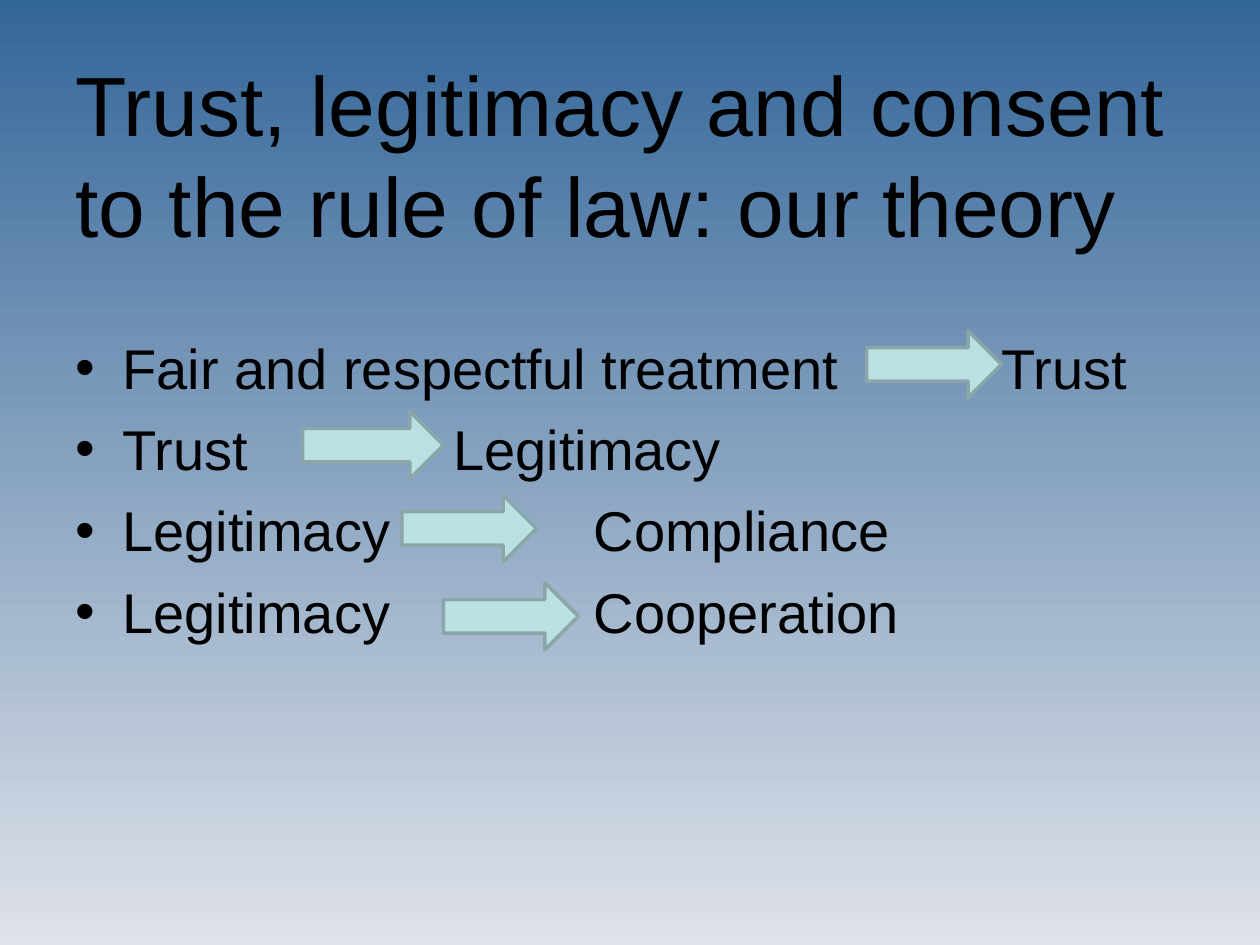
"""Build the slide on trust, legitimacy and consent."""
from dataclasses import dataclass

import lxml.etree
import pptx
import pptx.dml.color
import pptx.enum.shapes
import pptx.enum.text
import pptx.oxml.ns
import pptx.util

Cm = pptx.util.Cm
Pt = pptx.util.Pt
qn = pptx.oxml.ns.qn
FONT = "Arial"
INK = "000000"
INDENT = Cm(0.95)


@dataclass
class Claim:
    cause: str
    effect: str
    tab: float


@dataclass
class Arrow:
    left: float
    top: float
    width: float = 2.72
    height: float = 1.35


CLAIMS = [
    Claim("Fair and respectful treatment", "Trust", 18.67),
    Claim("Trust", "Legitimacy", 7.62),
    Claim("Legitimacy", "Compliance", 10.45),
    Claim("Legitimacy", "Cooperation", 10.45),
]
ARROWS = [
    Arrow(6.1, 8.3, 2.84),
    Arrow(17.47, 6.67),
    Arrow(8.1, 9.98),
    Arrow(8.94, 11.75),
]


def color(code: str) -> pptx.dml.color.RGBColor:
    return pptx.dml.color.RGBColor.from_string(code)


def paint(slide, top: str, base: str) -> None:
    fill = slide.background.fill
    fill.gradient()
    fill.gradient_angle = 270
    for stop, code, place in zip(fill.gradient_stops, (top, base), (0, 1)):
        stop.color.rgb = color(code)
        stop.position = place


def style(para, size: float) -> None:
    para.alignment = pptx.enum.text.PP_ALIGN.LEFT
    for run in para.runs:
        run.font.name = FONT
        run.font.size = Pt(size)
        run.font.color.rgb = color(INK)


def add_title(slide, text: str) -> None:
    title = slide.shapes.title
    title.left, title.top = Cm(1.27), Cm(2.26)
    title.width, title.height = Cm(22.86), Cm(1.68)
    frame = title.text_frame
    frame.text = text
    frame.word_wrap = True
    frame.auto_size = pptx.enum.text.MSO_AUTO_SIZE.NONE
    frame.vertical_anchor = pptx.enum.text.MSO_ANCHOR.MIDDLE
    style(frame.paragraphs[0], 48)


def add_bullet(para, tab: float) -> None:
    props = para._p.get_or_add_pPr()
    props.set("marL", str(INDENT))
    props.set("indent", str(-INDENT))
    lxml.etree.SubElement(props, qn("a:buFont"), typeface=FONT)
    lxml.etree.SubElement(props, qn("a:buChar"), char="•")
    tabs = lxml.etree.SubElement(props, qn("a:tabLst"))
    lxml.etree.SubElement(tabs, qn("a:tab"), pos=str(Cm(tab)), algn="l")


def add_claims(slide, claims: list[Claim]) -> None:
    box = slide.shapes.add_textbox(Cm(1.27), Cm(6.6), Cm(22.86), Cm(10.49))
    frame = box.text_frame
    frame.word_wrap = True
    frame.text = "\n".join(f"{claim.cause}\t{claim.effect}" for claim in claims)
    for row, (para, claim) in enumerate(zip(frame.paragraphs, claims)):
        add_bullet(para, claim.tab)
        para.space_before = Pt(8 if row else 0)
        style(para, 32)


def add_arrow(slide, arrow: Arrow) -> None:
    shape = slide.shapes.add_shape(
        pptx.enum.shapes.MSO_SHAPE.RIGHT_ARROW,
        Cm(arrow.left), Cm(arrow.top), Cm(arrow.width), Cm(arrow.height))
    shape.shadow.inherit = False
    shape.fill.solid()
    shape.fill.fore_color.rgb = color("BBE0E3")
    shape.line.color.rgb = color("8AA6A8")
    shape.line.width = Pt(2)


def main() -> None:
    deck = pptx.Presentation()
    deck.slide_width, deck.slide_height = Cm(25.4), Cm(19.05)
    slide = deck.slides.add_slide(deck.slide_layouts[5])
    paint(slide, "336699", "DFE2E9")
    add_title(slide, "Trust, legitimacy and consent to the rule of law: our theory")
    add_claims(slide, CLAIMS)
    for arrow in ARROWS:
        add_arrow(slide, arrow)
    deck.save("out.pptx")


if __name__ == "__main__":
    main()
